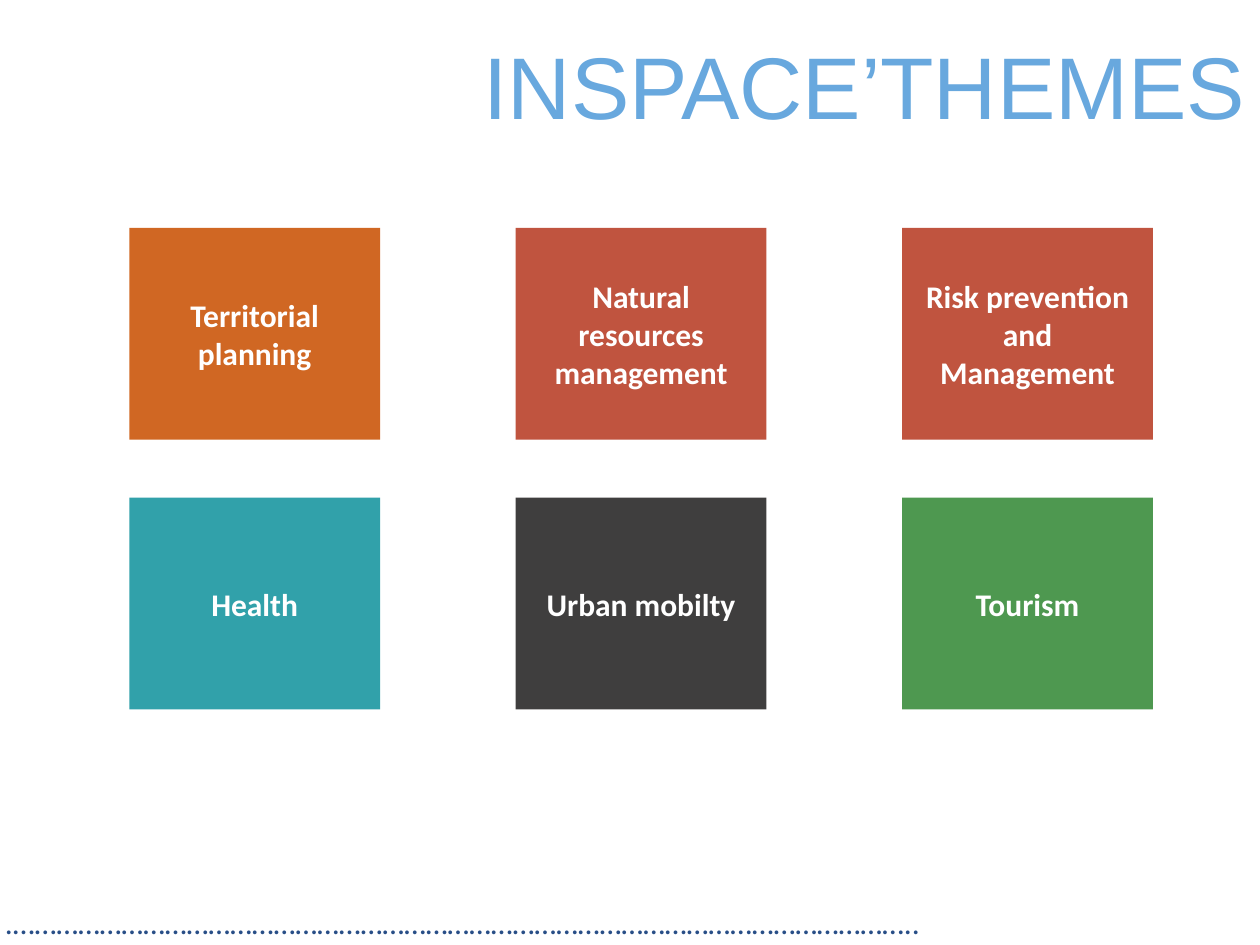
from dataclasses import dataclass

from pptx import Presentation
from pptx.dml.color import RGBColor
from pptx.enum.shapes import MSO_SHAPE as Shape
from pptx.enum.text import MSO_ANCHOR as Anchor, MSO_AUTO_SIZE as AutoSize, PP_ALIGN as Align
from pptx.util import Pt


@dataclass(frozen=True)
class Theme:
    heading_font: str = "Arial"
    body_font: str = "Calibri"
    title_size: int = 50
    body_size: int = 18
    title: str = "68A8DE"
    dots: str = "284E87"
    on_tile: str = "FFFFFF"
    orange: str = "D06723"
    red: str = "C0543F"
    teal: str = "31A1AA"
    charcoal: str = "3F3E3E"
    green: str = "4E9850"


class SlideBuilder:
    def __init__(self, slide, theme):
        self.slide = slide
        self.theme = theme

    def style(self, para, name, size, color, bold=False, align=Align.LEFT):
        para.alignment = align
        for span in para.runs:
            font = span.font
            font.name, font.size, font.bold = name, Pt(size), bold
            font.color.rgb = RGBColor.from_string(color)

    def title(self, text, left, top, width, height):
        box = self.slide.shapes.title
        box.left, box.top, box.width, box.height = map(Pt, (left, top, width, height))
        frame = box.text_frame
        frame.text = text
        frame.word_wrap = True
        frame.auto_size = AutoSize.NONE
        frame.vertical_anchor = Anchor.MIDDLE
        para = frame.paragraphs[0]
        para.line_spacing = 0.9
        self.style(para, self.theme.heading_font, self.theme.title_size,
                   self.theme.title, align=Align.RIGHT)

    def dotted_rule(self, text, left, top, width, height):
        box = self.slide.shapes.add_textbox(*map(Pt, (left, top, width, height)))
        frame = box.text_frame
        frame.text = text
        frame.word_wrap = False
        frame.auto_size = AutoSize.SHAPE_TO_FIT_TEXT
        self.style(frame.paragraphs[0], self.theme.body_font, self.theme.body_size,
                   self.theme.dots)

    def tile(self, text, color, left, top, width, height):
        box = self.slide.shapes.add_shape(
            Shape.RECTANGLE, *map(Pt, (left, top, width, height)))
        box.shadow.inherit = False
        box.fill.solid()
        box.fill.fore_color.rgb = RGBColor.from_string(color)
        box.line.fill.background()
        frame = box.text_frame
        frame.text = text
        frame.word_wrap = True
        frame.vertical_anchor = Anchor.MIDDLE
        self.style(frame.paragraphs[0], self.theme.body_font, self.theme.body_size,
                   self.theme.on_tile, bold=True, align=Align.CENTER)


def main():
    deck = Presentation()
    deck.slide_width, deck.slide_height = Pt(720), Pt(540)
    theme = Theme()
    page = SlideBuilder(deck.slides.add_slide(deck.slide_layouts[5]), theme)

    # Footer rule and title
    page.dotted_rule(".……………………………………………………………………………………………………………...",
                     -4.3, 512.6, 540.7, 28.8)
    page.title("INSPACE’THEMES", 145.4, 0, 573.8, 104.4)

    # Grid of themes
    rows = [
        [("Territorial planning", theme.orange),
         ("Natural resources management", theme.red),
         ("Risk prevention and Management", theme.red)],
        [("Health", theme.teal),
         ("Urban mobilty", theme.charcoal),
         ("Tourism", theme.green)],
    ]
    left, top, width, height = 73.9, 130.2, 143.3, 121
    column_step, row_step = 220.8, 154.2
    for row, themes in enumerate(rows):
        for column, (label, color) in enumerate(themes):
            page.tile(label, color, left + column * column_step,
                      top + row * row_step, width, height)

    deck.save("out.pptx")


if __name__ == "__main__":
    main()
